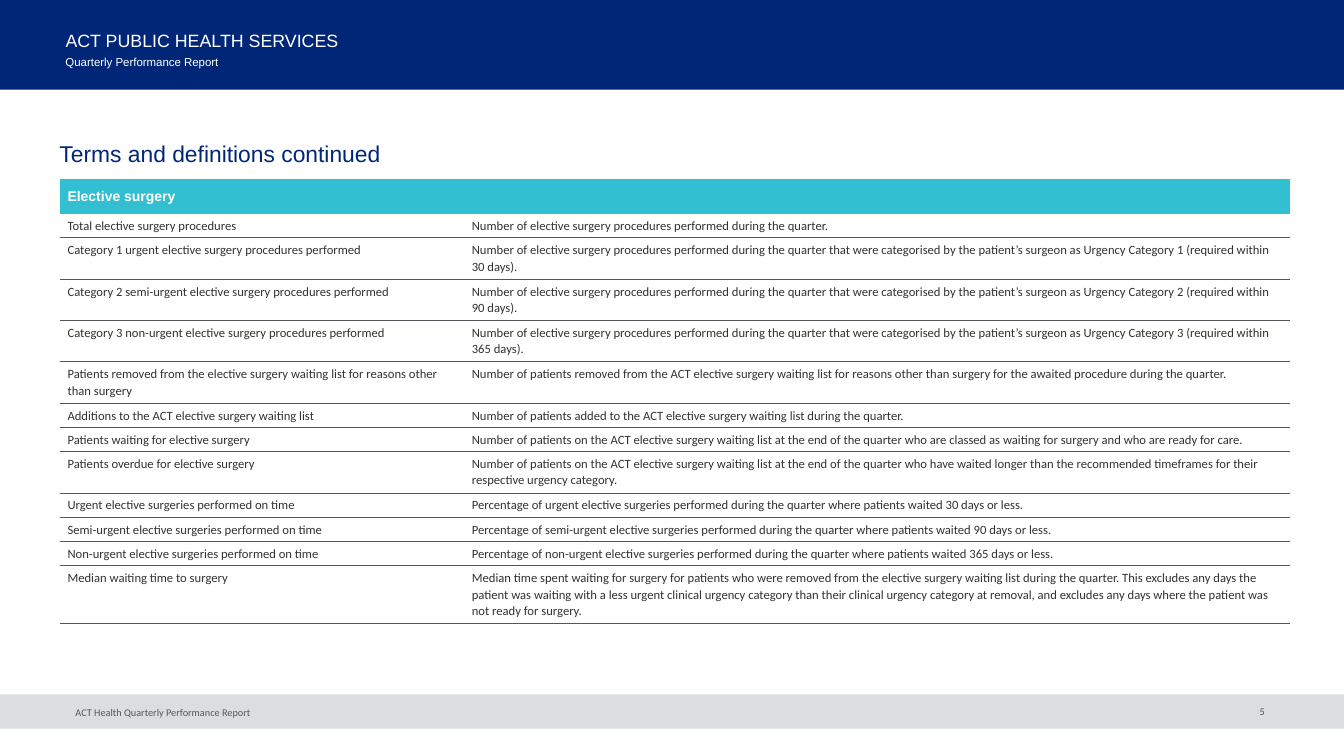
from dataclasses import dataclass

from lxml.etree import SubElement
from pptx import Presentation
from pptx.dml.color import RGBColor
from pptx.enum.shapes import MSO_SHAPE
from pptx.enum.text import MSO_ANCHOR, PP_ALIGN
from pptx.oxml import parse_xml
from pptx.oxml.ns import nsdecls, qn
from pptx.util import Emu, Pt

NAVY, TEAL, SILVER, WHITE = "002677", "31BFD1", "DCDDDF", "FFFFFF"
GREY, BODY_TEXT = "53565A", "323232"
PLAIN_TABLE_STYLE = "{2D5ABB26-0587-4C30-8999-92F81FD0307C}"
COLUMN_WIDTHS = (401, 819)
HEADER_HEIGHT = 32
ROW_HEIGHTS = {1: 24, 2: 41, 3: 57}  # by number of text lines


@dataclass
class Band:
    top: int
    height: int
    color: str


@dataclass
class Label:
    text: str
    left: int
    top: int
    width: int
    height: int
    size: float
    font: str
    color: str
    margins: tuple[int, int] = (0, 0)
    anchor: MSO_ANCHOR = MSO_ANCHOR.MIDDLE
    align: PP_ALIGN = PP_ALIGN.LEFT
    wrap: bool = True


@dataclass
class Definition:
    term: str
    meaning: str
    lines: int = 1


def urgency(category: int, kind: str, days: int) -> Definition:
    return Definition(
        f"Category {category} {kind} elective surgery procedures performed",
        "Number of elective surgery procedures performed during the quarter that were categorised "
        f"by the patient’s surgeon as Urgency Category {category} (required within {days} days).", 2)


def on_time(kind: str, days: int) -> Definition:
    return Definition(
        f"{kind} elective surgeries performed on time",
        f"Percentage of {kind.lower()} elective surgeries performed during the quarter "
        f"where patients waited {days} days or less.")


BANDS = [Band(689, 34, SILVER), Band(0, 89, NAVY)]

LABELS = [
    Label("ACT PUBLIC HEALTH SERVICES", 65, 24, 521, 32, 12.7, "Arial", WHITE),
    Label("Quarterly Performance Report", 65, 49, 287, 25, 8.2, "Arial", WHITE),
    Label("ACT Health Quarterly Performance Report", 65, 696, 195, 22, 7.3, "Calibri", GREY,
          margins=(10, 5), anchor=MSO_ANCHOR.TOP, wrap=False),
    Label("Terms and definitions continued", 59, 139, 1217, 36, 16.3, "Arial", NAVY,
          anchor=MSO_ANCHOR.TOP),
    Label("5", 1225, 696, 54, 20, 7.3, "Calibri", GREY, margins=(11, 6), align=PP_ALIGN.CENTER),
]

DEFINITIONS = [
    Definition("Total elective surgery procedures",
               "Number of elective surgery procedures performed during the quarter."),
    urgency(1, "urgent", 30),
    urgency(2, "semi-urgent", 90),
    urgency(3, "non-urgent", 365),
    Definition("Patients removed from the elective surgery waiting list for reasons other than surgery",
               "Number of patients removed from the ACT elective surgery waiting list for reasons "
               "other than surgery for the awaited procedure during the quarter.", 2),
    Definition("Additions to the ACT elective surgery waiting list",
               "Number of patients added to the ACT elective surgery waiting list during the quarter."),
    Definition("Patients waiting for elective surgery",
               "Number of patients on the ACT elective surgery waiting list at the end of the quarter "
               "who are classed as waiting for surgery and who are ready for care."),
    Definition("Patients overdue for elective surgery",
               "Number of patients on the ACT elective surgery waiting list at the end of the quarter "
               "who have waited longer than the recommended timeframes for their respective "
               "urgency category.", 2),
    on_time("Urgent", 30),
    on_time("Semi-urgent", 90),
    on_time("Non-urgent", 365),
    Definition("Median waiting time to surgery",
               "Median time spent waiting for surgery for patients who were removed from the elective "
               "surgery waiting list during the quarter. This excludes any days the patient was waiting "
               "with a less urgent clinical urgency category than their clinical urgency category at "
               "removal, and excludes any days where the patient was not ready for surgery.", 3),
]


def px(length: int) -> Emu:
    """Convert px, at 100 to the inch, to EMU."""
    return Emu(length * 9144)


def rgb(color: str) -> RGBColor:
    return RGBColor.from_string(color)


def set_font(paragraph, size: float, name: str, color: str, bold: bool = False) -> None:
    font = paragraph.font
    font.size, font.name, font.bold = Pt(size), name, bold
    font.color.rgb = rgb(color)


def add_band(slide, band: Band, width: int) -> None:
    shape = slide.shapes.add_shape(MSO_SHAPE.RECTANGLE, 0, px(band.top), width, px(band.height))
    shape.shadow.inherit = False
    shape.fill.solid()
    shape.fill.fore_color.rgb = rgb(band.color)
    shape.line.fill.background()


def add_label(slide, label: Label) -> None:
    box = slide.shapes.add_textbox(px(label.left), px(label.top), px(label.width), px(label.height))
    frame = box.text_frame
    frame.word_wrap = label.wrap
    frame.vertical_anchor = label.anchor
    frame.margin_left = frame.margin_right = px(label.margins[0])
    frame.margin_top = frame.margin_bottom = px(label.margins[1])
    paragraph = frame.paragraphs[0]
    paragraph.text = label.text
    paragraph.alignment = label.align
    set_font(paragraph, label.size, label.font, label.color)


def fill_cell(cell, text: str, margin: int) -> None:
    cell.margin_left = cell.margin_right = px(8)
    cell.margin_top = cell.margin_bottom = px(margin)
    paragraph = cell.text_frame.paragraphs[0]
    paragraph.text = text
    paragraph.line_spacing = 1.07


def add_rule_below(cell) -> None:
    line = parse_xml(f'<a:lnB {nsdecls("a")} w="{Pt(0.5)}"/>')
    fill = SubElement(line, qn("a:solidFill"))
    SubElement(fill, qn("a:srgbClr"), val=GREY)
    cell._tc.get_or_add_tcPr().insert(0, line)


def add_definitions_table(slide) -> None:
    heights = [HEADER_HEIGHT] + [ROW_HEIGHTS[item.lines] for item in DEFINITIONS]
    table = slide.shapes.add_table(len(heights), len(COLUMN_WIDTHS), px(59), px(178),
                                   px(sum(COLUMN_WIDTHS)), px(sum(heights))).table
    table.horz_banding = False
    table._tbl.tblPr.find(qn("a:tableStyleId")).text = PLAIN_TABLE_STYLE
    for column, width in zip(table.columns, COLUMN_WIDTHS):
        column.width = px(width)
    for row, height in zip(table.rows, heights):
        row.height = px(height)

    # Header across both columns
    header = table.cell(0, 0)
    header.merge(table.cell(0, 1))
    fill_cell(header, "Elective surgery", 8)
    header.vertical_anchor = MSO_ANCHOR.MIDDLE
    header.fill.solid()
    header.fill.fore_color.rgb = rgb(TEAL)
    set_font(header.text_frame.paragraphs[0], 10, "Arial", WHITE, bold=True)

    # Terms and their meanings
    for row_index, item in enumerate(DEFINITIONS, start=1):
        for column_index, text in enumerate((item.term, item.meaning)):
            cell = table.cell(row_index, column_index)
            fill_cell(cell, text, 4)
            cell.fill.background()
            add_rule_below(cell)
            set_font(cell.text_frame.paragraphs[0], 9, "Calibri", BODY_TEXT)


def main() -> None:
    presentation = Presentation()
    presentation.slide_width, presentation.slide_height = px(1333), px(750)
    slide = presentation.slides.add_slide(presentation.slide_layouts[6])
    for band in BANDS:
        add_band(slide, band, presentation.slide_width)
    for label in LABELS:
        add_label(slide, label)
    add_definitions_table(slide)
    presentation.save("out.pptx")


if __name__ == "__main__":
    main()
